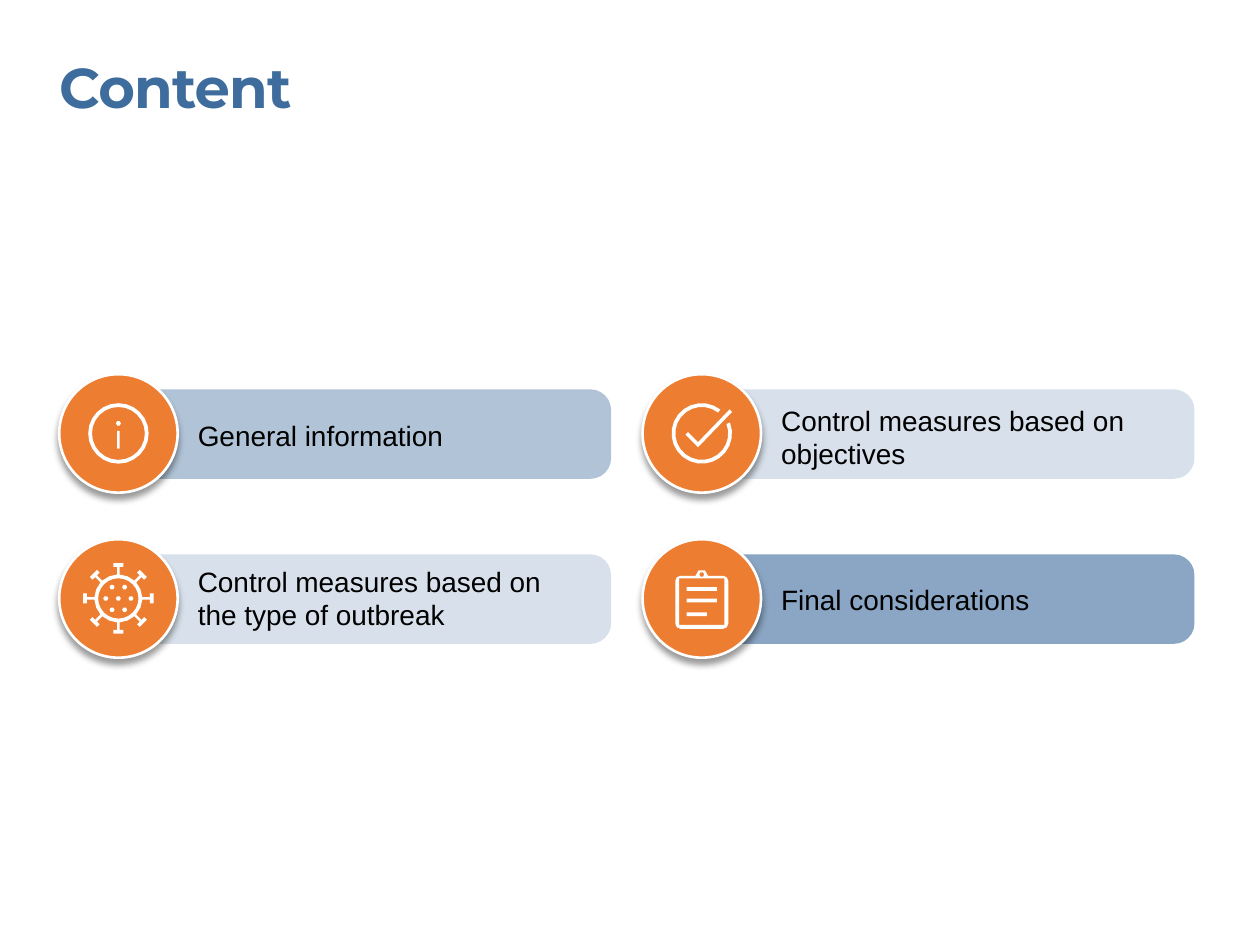
"""Build a contents slide with four icon cards in a two-by-two grid."""
import math

from lxml import etree
from pptx import Presentation
from pptx import util as u
from pptx.dml.color import RGBColor
from pptx.enum import shapes, text
from pptx.oxml import ns

BLUE = RGBColor(0x3D, 0x6C, 0x9D)
ORANGE = RGBColor(0xED, 0x7D, 0x31)
WHITE = RGBColor(0xFF, 0xFF, 0xFF)
BLACK = RGBColor(0x00, 0x00, 0x00)

BADGE_SIZE = 0.94
COLUMNS = (0.94, 5.57)
ROWS = (3.44, 4.75)


def arc(x, y, radius, start=0, end=360):
    steps = max(2, round(abs(end - start) / (15 if radius > 0.1 else 60)))
    angles = [math.radians(start + (end - start) * i / steps) for i in range(steps + 1)]
    return [(x + radius * math.cos(a), y + radius * math.sin(a)) for a in angles]


def box(left, top, right, bottom):
    return [(left, top), (right, top), (right, bottom), (left, bottom)]


def rounded_box(left, top, right, bottom, radius):
    corners = box(left + radius, top + radius, right - radius, bottom - radius)
    ordered = corners[1:] + corners[:1]
    return [
        point
        for i, (x, y) in enumerate(ordered)
        for point in arc(x, y, radius, 90 * i - 90, 90 * i)
    ]


def info_icon():
    return [
        arc(0, 0, 0.24),
        arc(0, 0, 0.21, 360, 0),
        arc(0, -0.08, 0.02),
        box(-0.01, -0.02, 0.01, 0.12),
    ]


def check_icon():
    return [
        arc(0, 0, 0.24, -21, 308) + arc(0, 0, 0.21, 308, -21),
        [(-0.03, 0.11), (-0.13, 0.01), (-0.11, -0.01), (-0.03, 0.07), (0.22, -0.19), (0.24, -0.17)],
    ]


def virus_icon():
    spike = [(0.19, -0.01), (0.25, -0.01), (0.25, -0.04), (0.28, -0.04)]
    spike += [(r, -offset) for r, offset in reversed(spike)]
    outline = []
    for degrees in range(0, 360, 45):
        angle = math.radians(degrees)
        cos, sin = math.cos(angle), math.sin(angle)
        outline += [(r * cos - s * sin, r * sin + s * cos) for r, s in spike]
        middle = angle + math.pi / 8
        outline.append((0.19 * math.cos(middle), 0.19 * math.sin(middle)))
    dots = [(0, 0), (-0.1, 0), (0.1, 0)]
    dots += [(x, y) for x in (-0.05, 0.05) for y in (-0.09, 0.09)]
    return [outline, arc(0, 0, 0.16, 360, 0)] + [arc(x, y, 0.02) for x, y in dots]


def clipboard_icon():
    board = rounded_box(-0.21, -0.18, 0.21, 0.24, 0.04)
    lines = [(0.12, 0.04), (0.01, 0.12), (-0.08, 0.12)]
    return [
        arc(0, -0.18, 0.05, 180, 360) + board,
        box(-0.18, -0.16, 0.18, 0.21)[::-1],
        arc(0, -0.19, 0.02, 360, 0),
    ] + [box(-0.12, y - 0.01, right, y + 0.02) for y, right in lines]


class SlideBuilder:
    def __init__(self, slide):
        self.slide = slide
        self.title_font = "Montserrat"
        self.body_font = "Arial"

    def style(self, shape, color):
        shape.shadow.inherit = False
        shape.fill.solid()
        shape.fill.fore_color.rgb = color
        shape.line.fill.background()

    def bar(self, left, top, opacity):
        shape = self.slide.shapes.add_shape(
            shapes.MSO_SHAPE.ROUNDED_RECTANGLE,
            u.Inches(left), u.Inches(top), u.Inches(3.91), u.Inches(0.71),
        )
        shape.adjustments[0] = 0.23
        self.style(shape, BLUE)
        color = shape._element.spPr.find(".//" + ns.qn("a:srgbClr"))
        etree.SubElement(color, ns.qn("a:alpha"), val=str(opacity * 1000))

    def badge(self, x, y):
        shape = self.slide.shapes.add_shape(
            shapes.MSO_SHAPE.OVAL,
            u.Inches(x - BADGE_SIZE / 2), u.Inches(y - BADGE_SIZE / 2),
            u.Inches(BADGE_SIZE), u.Inches(BADGE_SIZE),
        )
        self.style(shape, ORANGE)
        shape.line.color.rgb = WHITE
        shape.line.width = u.Pt(1.5)
        effects = shape._element.spPr.find(ns.qn("a:effectLst"))
        shadow = etree.SubElement(
            effects, ns.qn("a:outerShdw"), blurRad=str(int(u.Pt(4))), dist=str(int(u.Pt(3))),
            dir="5400000", algn="ctr", rotWithShape="0",
        )
        color = etree.SubElement(shadow, ns.qn("a:srgbClr"), val=str(BLACK))
        etree.SubElement(color, ns.qn("a:alpha"), val="40000")

    def icon(self, x, y, contours):
        placed = [[(u.Inches(x + dx), u.Inches(y + dy)) for dx, dy in c] for c in contours]
        builder = self.slide.shapes.build_freeform(*placed[0][0])
        for i, points in enumerate(placed):
            if i:
                builder.move_to(*points[0])
            builder.add_line_segments(points[1:], close=True)
        self.style(builder.convert_to_shape(), WHITE)

    def label(self, left, top, width, height, words, size, font, color, bold=False, spacing=0):
        shape = self.slide.shapes.add_textbox(
            u.Inches(left), u.Inches(top), u.Inches(width), u.Inches(height)
        )
        frame = shape.text_frame
        frame.word_wrap = True
        frame.auto_size = text.MSO_AUTO_SIZE.SHAPE_TO_FIT_TEXT
        frame.margin_left = frame.margin_right = frame.margin_top = frame.margin_bottom = 0
        run = frame.paragraphs[0].add_run()
        run.text = words
        run.font.size = u.Pt(size)
        run.font.name = font
        run.font.bold = bold
        run.font.color.rgb = color
        if spacing:
            run._r.get_or_add_rPr().set("spc", str(int(spacing * 100)))

    def title(self, words):
        self.label(0.47, 0.42, 8.55, 0.54, words, 32, self.title_font, BLUE, True, -0.5)

    def card(self, x, y, words, text_top, text_height, opacity, contours):
        self.bar(x, y - 0.35, opacity)
        self.label(x + 0.63, text_top, 3.09, text_height, words, 16, self.body_font, BLACK)
        self.badge(x, y)
        self.icon(x, y, contours)


def main():
    presentation = Presentation()
    presentation.slide_width = u.Inches(10)
    presentation.slide_height = u.Inches(7.5)
    builder = SlideBuilder(presentation.slides.add_slide(presentation.slide_layouts[6]))
    builder.title("Content")
    cards = (
        ("General information", 3.32, 0.27, 40, info_icon()),
        ("Control measures based on objectives", 3.2, 0.54, 20, check_icon()),
        ("Control measures based on the type of outbreak", 4.48, 0.54, 20, virus_icon()),
        ("Final considerations", 4.62, 0.27, 60, clipboard_icon()),
    )
    for i, card in enumerate(cards):
        builder.card(COLUMNS[i % 2], ROWS[i // 2], *card)
    presentation.save("out.pptx")


if __name__ == "__main__":
    main()
